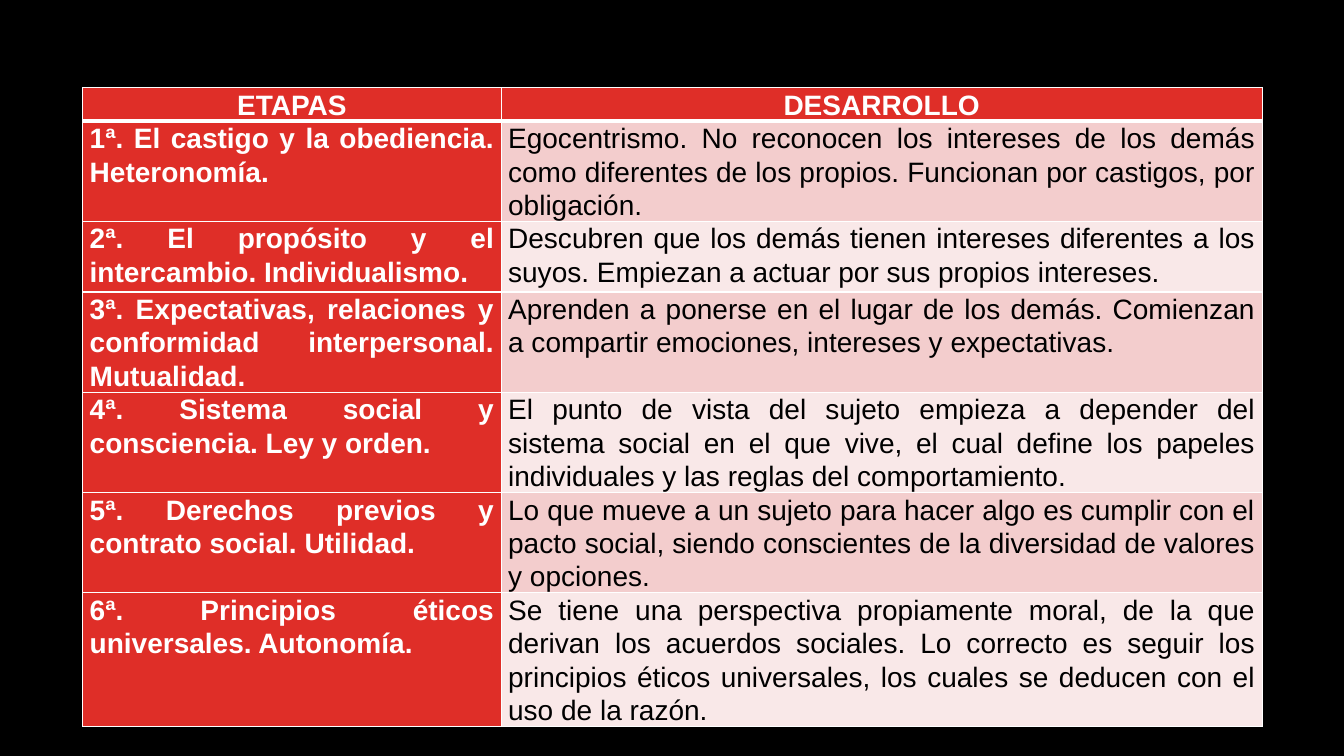
from dataclasses import dataclass

from lxml import etree
from pptx import Presentation
from pptx.dml.color import RGBColor
from pptx.enum import text
from pptx.oxml import ns
from pptx.util import Inches, Pt

RED, WHITE, BLACK = "DF2E28", "FFFFFF", "000000"
BANDS = ("F3CDCD", "F9E8E8")
COL_WIDTHS = (4.15, 7.55)
ALIGN = text.PP_ALIGN


@dataclass
class Stage:
    name: str
    development: str
    height: float


HEADER = Stage("ETAPAS", "DESARROLLO", 0.31)
STAGES = [
    Stage("1ª. El castigo y la obediencia. Heteronomía.",
          "Egocentrismo. No reconocen los intereses de los demás como diferentes "
          "de los propios. Funcionan por castigos, por obligación.", 0.7),
    Stage("2ª. El propósito y el intercambio. Individualismo.",
          "Descubren que los demás tienen intereses diferentes a los suyos. "
          "Empiezan a actuar por sus propios intereses.", 0.7),
    Stage("3ª. Expectativas, relaciones y conformidad interpersonal. Mutualidad.",
          "Aprenden a ponerse en el lugar de los demás. Comienzan a compartir "
          "emociones, intereses y expectativas.", 0.98),
    Stage("4ª. Sistema social y consciencia. Ley y orden.",
          "El punto de vista del sujeto empieza a depender del sistema social en "
          "el que vive, el cual define los papeles individuales y las reglas del "
          "comportamiento.", 0.98),
    Stage("5ª. Derechos previos y contrato social. Utilidad.",
          "Lo que mueve a un sujeto para hacer algo es cumplir con el pacto "
          "social, siendo conscientes de la diversidad de valores y opciones.", 0.98),
    Stage("6ª. Principios éticos universales. Autonomía.",
          "Se tiene una perspectiva propiamente moral, de la que derivan los "
          "acuerdos sociales. Lo correcto es seguir los principios éticos "
          "universales, los cuales se deducen con el uso de la razón.", 1.17),
]


def paint(fill, color: str) -> None:
    fill.solid()
    fill.fore_color.rgb = RGBColor.from_string(color)


def set_attrs(target, values: dict) -> None:
    for name, value in values.items():
        setattr(target, name, value)


def add_borders(cell, widths: dict[str, float]) -> None:
    tc_pr = cell._tc.get_or_add_tcPr()
    for side, width in widths.items():
        ln = etree.SubElement(tc_pr, ns.qn(f"a:ln{side}"), w=str(Pt(width)))
        solid = etree.SubElement(ln, ns.qn("a:solidFill"))
        etree.SubElement(solid, ns.qn("a:srgbClr"), val=WHITE)


def fill_cell(cell, words: str, row: int, col: int) -> None:
    strong = row == 0 or col == 0
    add_borders(cell, {"L": 1, "R": 1, "T": 3 if row == 1 else 1,
                       "B": 3 if row == 0 else 1})
    paint(cell.fill, RED if strong else BANDS[(row - 1) % 2])
    set_attrs(cell, {"margin_left": Inches(0.07), "margin_right": Inches(0.07),
                     "margin_top": 0, "margin_bottom": 0})
    p = cell.text_frame.paragraphs[0]
    set_attrs(p, {"alignment": ALIGN.CENTER if row == 0 else ALIGN.JUSTIFY,
                  "line_spacing": 1.07, "space_after": Pt(8)})
    r = p.add_run()
    r.text = words
    set_attrs(r.font, {"name": "Arial", "size": Pt(20), "bold": strong})
    r.font.color.rgb = RGBColor.from_string(WHITE if strong else BLACK)


def main() -> None:
    prs = Presentation()
    prs.slide_width, prs.slide_height = Inches(13.33), Inches(7.5)
    s = prs.slides.add_slide(prs.slide_layouts[6])
    paint(s.background.fill, BLACK)

    # Table of moral development stages
    rows = [HEADER, *STAGES]
    table = s.shapes.add_table(len(rows), len(COL_WIDTHS), Inches(0.82), Inches(0.87),
                               Inches(sum(COL_WIDTHS)), Inches(5.96)).table
    for column, width in zip(table.columns, COL_WIDTHS):
        column.width = Inches(width)
    for i, stage in enumerate(rows):
        table.rows[i].height = Inches(stage.height)
        for j, words in enumerate((stage.name, stage.development)):
            fill_cell(table.cell(i, j), words, i, j)

    prs.save("out.pptx")


if __name__ == "__main__":
    main()
